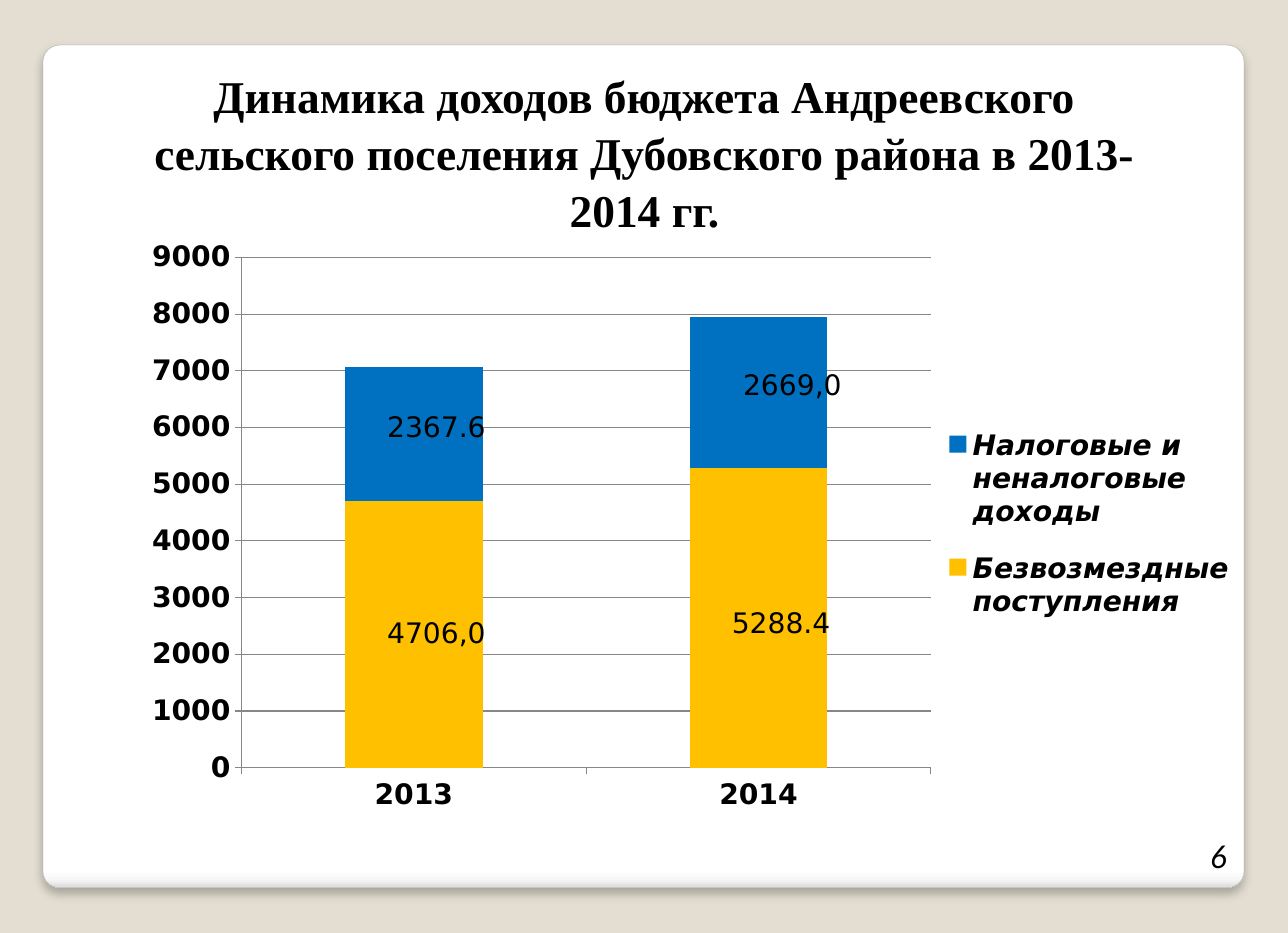
from dataclasses import dataclass

from lxml import etree
from pptx import Presentation
from pptx.chart.data import CategoryChartData
from pptx.dml.color import RGBColor as RGB
from pptx.enum.chart import XL_CHART_TYPE as ChartType
from pptx.enum.chart import XL_LEGEND_POSITION as LegendPos
from pptx.enum.chart import XL_TICK_MARK as Tick
from pptx.enum.shapes import MSO_SHAPE as Shape
from pptx.enum.text import MSO_ANCHOR as Anchor
from pptx.enum.text import PP_ALIGN as Align
from pptx.oxml import parse_xml
from pptx.oxml.ns import qn
from pptx.util import Pt


@dataclass(frozen=True)
class Theme:
    backdrop: str = "E3DED1"
    edge: str = "A4A4A4"
    ink: str = "000000"
    grid: str = "878787"
    grants: str = "FFC000"
    taxes: str = "0070C0"
    card_stops: tuple = ((0, "FFFFFF"), (98, "FFFFFF"), (99, "F7F7F7"), (100, "DADADA"))
    title_font: str = "Times New Roman"
    chart_font: str = "DejaVu Sans"
    number_font: str = "Lato"
    title_size: int = 29
    chart_size: int = 18
    number_size: int = 20


DRAWING_NS = 'xmlns:a="http://schemas.openxmlformats.org/drawingml/2006/main"'


class SlideBuilder:
    def __init__(self, slide, theme):
        self.slide, self.theme = slide, theme
        backdrop = slide.background.fill
        backdrop.solid()
        backdrop.fore_color.rgb = RGB.from_string(theme.backdrop)

    def style(self, font, name, size, bold=False, italic=False):
        font.name, font.size = name, Pt(size)
        font.bold, font.italic = bold, italic
        font.color.rgb = RGB.from_string(self.theme.ink)

    def card(self, left, top, width, height):
        card = self.slide.shapes.add_shape(
            Shape.ROUNDED_RECTANGLE, Pt(left), Pt(top), Pt(width), Pt(height))
        card.adjustments[0] = 0.02
        card.line.color.rgb = RGB.from_string(self.theme.edge)
        card.line.width = Pt(0.16)
        card.fill.gradient()
        card.fill.gradient_angle = 270
        # Four gradient stops and a soft shadow below the card
        stops = card._element.spPr.find(qn("a:gradFill")).find(qn("a:gsLst"))
        for stop in list(stops):
            stops.remove(stop)
        for position, color in self.theme.card_stops:
            stop = etree.SubElement(stops, qn("a:gs"), pos=str(position * 1000))
            etree.SubElement(stop, qn("a:srgbClr"), val=color)
        card._element.spPr.append(parse_xml(
            f'<a:effectLst {DRAWING_NS}><a:outerShdw blurRad="{Pt(6)}" dist="{Pt(4)}" '
            f'dir="5400000" algn="tl" rotWithShape="0"><a:srgbClr val="{self.theme.ink}">'
            '<a:alpha val="25000"/></a:srgbClr></a:outerShdw></a:effectLst>'))

    def text(self, words, left, top, width, height, align, spacing=1.0, **font):
        frame = self.slide.shapes.add_textbox(
            Pt(left), Pt(top), Pt(width), Pt(height)).text_frame
        frame.word_wrap = True
        frame.vertical_anchor = Anchor.MIDDLE
        frame.margin_left = frame.margin_right = Pt(8)
        frame.margin_top = frame.margin_bottom = Pt(4)
        paragraph = frame.paragraphs[0]
        paragraph.text, paragraph.alignment = words, align
        paragraph.line_spacing = spacing
        self.style(paragraph.font, **font)

    def place(self, parent, index, x, y, w=None, h=None, inner=False):
        """Put a manual layout, in fractions of the chart, into a chart part."""
        for old in parent.findall(qn("c:layout")):
            parent.remove(old)
        layout = etree.Element(qn("c:layout"))
        manual = etree.SubElement(layout, qn("c:manualLayout"))
        values = {"x": x, "y": y}
        if w:
            if inner:
                etree.SubElement(manual, qn("c:layoutTarget"), val="inner")
            for mode in ("xMode", "yMode"):
                etree.SubElement(manual, qn(f"c:{mode}"), val="edge")
            values.update(w=w, h=h)
        for name, value in values.items():
            etree.SubElement(manual, qn(f"c:{name}"), val=str(value))
        parent.insert(index, layout)

    def axis(self, axis):
        axis.major_tick_mark, axis.minor_tick_mark = Tick.OUTSIDE, Tick.NONE
        axis.format.line.color.rgb = RGB.from_string(self.theme.grid)
        self.style(axis.tick_labels.font, self.theme.chart_font,
                   self.theme.chart_size, bold=True)

    def point_label(self, point, words, shift):
        label = point.data_label
        if words:
            label.text_frame.text = words
            font = label.text_frame.paragraphs[0].runs[0].font
        else:
            font = label.font
        self.style(font, self.theme.chart_font, self.theme.chart_size)
        self.place(point.data_label._dLbl, 1, *shift)

    def stacked_chart(self, left, top, width, height, years, incomes):
        data = CategoryChartData()
        data.categories = years
        for name, _, values, _ in incomes:
            data.add_series(name, values)
        chart = self.slide.shapes.add_chart(
            ChartType.COLUMN_STACKED, Pt(left), Pt(top), Pt(width), Pt(height), data).chart
        self.style(chart.font, self.theme.chart_font, self.theme.chart_size)
        chart.has_title = False

        # Axes and grid
        self.axis(chart.category_axis)
        scale = chart.value_axis
        self.axis(scale)
        scale.minimum_scale, scale.maximum_scale, scale.major_unit = 0, 9000, 1000
        scale.has_major_gridlines = True
        scale.major_gridlines.format.line.color.rgb = RGB.from_string(self.theme.grid)

        # Columns with their shifted labels
        plot = chart.plots[0]
        plot.gap_width, plot.overlap, plot.vary_by_categories = 150, 100, False
        for series, (_, color, _, labels) in zip(plot.series, incomes):
            series.format.fill.solid()
            series.format.fill.fore_color.rgb = RGB.from_string(color)
            for index, (words, shift) in enumerate(labels):
                self.point_label(series.points[index], words, shift)

        # Legend and plot area
        chart.has_legend = True
        legend = chart.legend
        legend.position, legend.include_in_layout = LegendPos.RIGHT, False
        self.style(legend.font, self.theme.chart_font, self.theme.chart_size,
                   bold=True, italic=True)
        self.place(legend._element, 1, 0.72, 0.3, 0.26, 0.4)
        plot_area = chart._chartSpace.chart.plotArea
        self.place(plot_area, 0, 0.1, 0.05, 0.61, 0.86, inner=True)


def main():
    theme = Theme()
    deck = Presentation()
    deck.slide_width, deck.slide_height = Pt(822.24), Pt(595.44)
    page = SlideBuilder(deck.slides.add_slide(deck.slide_layouts[6]), theme)

    # White card
    page.card(27.4, 28.8, 766.8, 537.8)

    # Page number
    page.text("6", 750.2, 530.6, 41, 31.7, Align.RIGHT,
              name=theme.number_font, size=theme.number_size, italic=True)

    # Budget income by year: each label is its own wording or the value, and a shift
    page.stacked_chart(82.1, 145.4, 721.4, 378.7, ("2013", "2014"), (
        ("Безвозмездные поступления", theme.grants, (4706, 5288.4),
         (("4706,0", (0.02, 0)), (None, (0.02, 0.01)))),
        ("Налоговые и неналоговые доходы", theme.taxes, (2367.6, 2669),
         ((None, (0.02, -0.01)), ("2669,0", (0.03, -0.01)))),
    ))

    # Title
    page.text("Динамика доходов бюджета Андреевского сельского поселения "
              "Дубовского района в 2013-2014 гг.", 61.9, 39.6, 699.1, 113.8,
              Align.CENTER, spacing=1.05, name=theme.title_font,
              size=theme.title_size, bold=True)

    deck.save("out.pptx")


if __name__ == "__main__":
    main()
